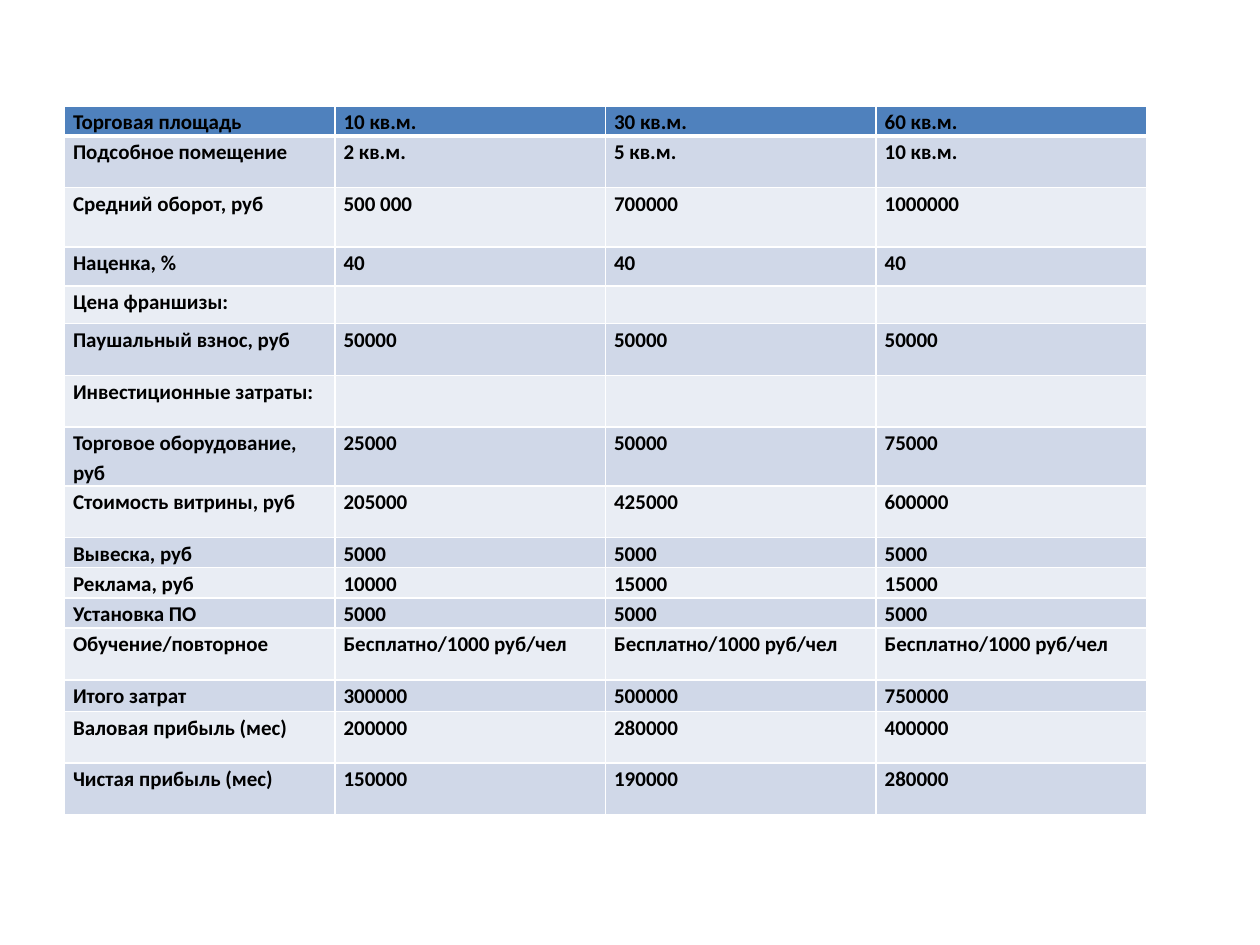
from lxml.etree import SubElement
from pptx import Presentation
from pptx.dml.color import RGBColor
from pptx.oxml.ns import qn
from pptx.util import Inches, Pt

HUES = {"head": "4F81BD", "dark": "D0D8E8", "light": "E9EDF4",
        "line": "FFFFFF", "text": "000000"}
FONT = {"name": "Calibri", "size": Pt(12), "bold": True}
PAD = {"margin_left": Inches(0.07), "margin_right": Inches(0.07),
       "margin_top": 0, "margin_bottom": 0}
TRAIN = "Бесплатно/1000 руб/чел"
ROWS = [
    (0.24, "Торговая площадь", "10 кв.м.", "30 кв.м.", "60 кв.м."),
    (0.41, "Подсобное помещение", "2 кв.м.", "5 кв.м.", "10 кв.м."),
    (0.47, "Средний оборот, руб", "500 000", "700000", "1000000"),
    (0.31, "Наценка, %", "40", "40", "40"),
    (0.3, "Цена франшизы:", "", "", ""),
    (0.41, "Паушальный взнос, руб", "50000", "50000", "50000"),
    (0.41, "Инвестиционные затраты:", "", "", ""),
    (0.41, "Торговое оборудование, руб", "25000", "50000", "75000"),
    (0.41, "Стоимость витрины, руб", "205000", "425000", "600000"),
    (0.24, "Вывеска, руб", "5000", "5000", "5000"),
    (0.24, "Реклама, руб", "10000", "15000", "15000"),
    (0.24, "Установка ПО", "5000", "5000", "5000"),
    (0.41, "Обучение/повторное", TRAIN, TRAIN, TRAIN),
    (0.25, "Итого затрат", "300000", "500000", "750000"),
    (0.41, "Валовая прибыль (мес)", "200000", "280000", "400000"),
    (0.41, "Чистая прибыль (мес)", "150000", "190000", "280000"),
]


class Deck:
    """Holds the table style and the current slide."""

    def __init__(self, slide):
        self.slide = slide

    def apply(self, item, style):
        for key, value in style.items():
            setattr(item, key, value)

    def border(self, cell, widths):
        props = cell._tc.get_or_add_tcPr()
        for side, width in widths.items():
            line = SubElement(props, qn(f"a:ln{side}"), w=str(Pt(width)))
            fill = SubElement(line, qn("a:solidFill"))
            SubElement(fill, qn("a:srgbClr"), val=HUES["line"])

    def cell(self, cell, text, hue, widths):
        self.apply(cell, PAD)
        self.border(cell, widths)
        cell.fill.solid()
        cell.fill.fore_color.rgb = RGBColor.from_string(HUES[hue])
        para = cell.text_frame.paragraphs[0]
        para.line_spacing = 1.15
        if text:
            run = para.add_run()
            run.text = text
            self.apply(run.font, FONT)
            run.font.color.rgb = RGBColor.from_string(HUES["text"])
        else:
            end = SubElement(para._p, qn("a:endParaRPr"))
            end.set("sz", "1200")

    def table(self, left, top, width, rows):
        count = len(rows[0]) - 1
        high = sum(row[0] for row in rows)
        frame = self.slide.shapes.add_table(
            len(rows), count, Inches(left), Inches(top),
            Inches(width), Inches(high))
        table = frame.table
        for col in table.columns:
            col.width = Inches(width / count)
        for i, (height, *texts) in enumerate(rows):
            table.rows[i].height = Inches(height)
            hue = "head" if i == 0 else ("light", "dark")[i % 2]
            widths = {"L": 1, "R": 1, "T": 3 if i == 1 else 1,
                      "B": 3 if i == 0 else 1}
            for j, text in enumerate(texts):
                self.cell(table.cell(i, j), text, hue, widths)


def main():
    show = Presentation()
    show.slide_width, show.slide_height = Inches(10), Inches(7.5)
    deck = Deck(show.slides.add_slide(show.slide_layouts[6]))
    deck.table(0.51, 0.84, 8.59, ROWS)
    show.save("out.pptx")


if __name__ == "__main__":
    main()
